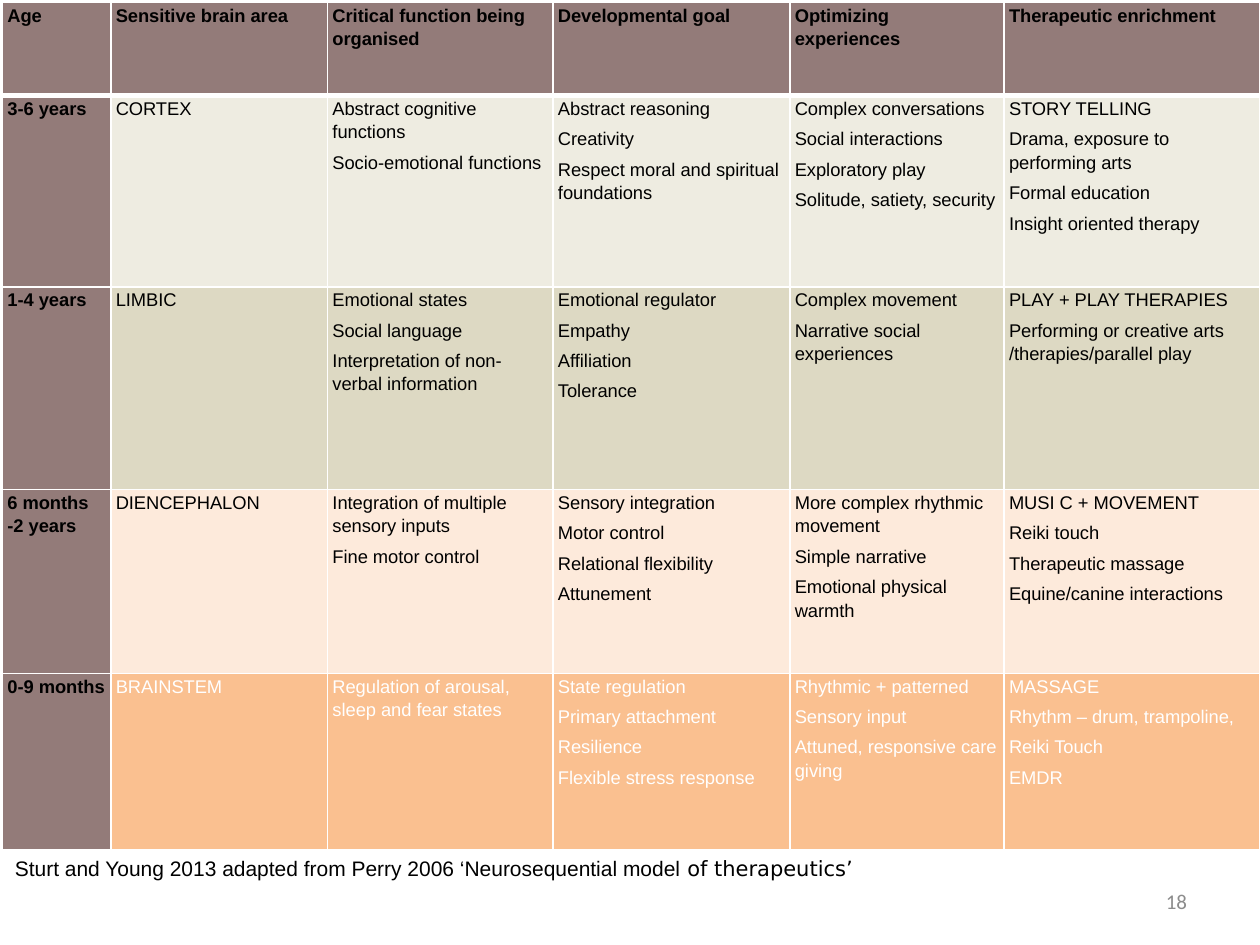
from collections import namedtuple
from dataclasses import dataclass

from lxml.etree import SubElement
from pptx import Presentation
from pptx.dml.color import RGBColor as Rgb
from pptx.enum.text import MSO_ANCHOR as Anchor, PP_ALIGN as Align
from pptx.oxml.ns import qn
from pptx.util import Cm, Pt

Box = namedtuple("Box", "left top width height")


@dataclass(frozen=True)
class Theme:
    heading_fill: str = "937B79"
    ink: str = "000000"
    light: str = "FFFFFF"
    muted: str = "8C8C8C"
    body_font: str = "Arial"
    credit_font: str = "DejaVu Sans"
    number_font: str = "Calibri"
    table_size: float = 10.5
    note_size: float = 12
    line_spacing: float = 1.15


THEME = Theme()
Stage = namedtuple("Stage", "age fill ink columns")

HEADINGS = ["Age", "Sensitive brain area", "Critical function being organised",
            "Developmental goal", "Optimizing experiences", "Therapeutic enrichment"]
STAGES = [
    Stage("3-6 years", "EEECE1", THEME.ink, [
        ["CORTEX"],
        ["Abstract cognitive functions", "Socio-emotional functions"],
        ["Abstract reasoning", "Creativity", "Respect moral and spiritual foundations"],
        ["Complex conversations", "Social interactions", "Exploratory play",
         "Solitude, satiety, security"],
        ["STORY TELLING", "Drama, exposure to performing arts", "Formal education",
         "Insight oriented therapy"],
    ]),
    Stage("1-4 years", "DDD9C3", THEME.ink, [
        ["LIMBIC"],
        ["Emotional states", "Social language", "Interpretation of non-verbal information"],
        ["Emotional regulator", "Empathy", "Affiliation", "Tolerance"],
        ["Complex movement", "Narrative social experiences"],
        ["PLAY + PLAY THERAPIES", "Performing or creative arts /therapies/parallel play"],
    ]),
    Stage("6 months -2 years", "FDEADB", THEME.ink, [
        ["DIENCEPHALON"],
        ["Integration of multiple sensory inputs", "Fine motor control"],
        ["Sensory integration", "Motor control", "Relational flexibility", "Attunement"],
        ["More complex rhythmic movement", "Simple narrative", "Emotional physical warmth"],
        ["MUSI C + MOVEMENT", "Reiki touch", "Therapeutic massage",
         "Equine/canine interactions"],
    ]),
    Stage("0-9 months", "FAC090", THEME.light, [
        ["BRAINSTEM"],
        ["Regulation of arousal, sleep and fear states"],
        ["State regulation", "Primary attachment", "Resilience", "Flexible stress response"],
        ["Rhythmic + patterned", "Sensory input", "Attuned, responsive care giving"],
        ["MASSAGE", "Rhythm – drum, trampoline,", "Reiki Touch", "EMDR"],
    ]),
]
COLUMN_SHARES = [0.86, 1.72, 1.79, 1.88, 1.70, 2.03]
ROW_SHARES = [0.74, 1.52, 1.61, 1.46, 1.40]


def add_run(paragraph, text, font, size, color, bold=False):
    run = paragraph.add_run()
    run.text = text
    run.font.name = font
    run.font.size = Pt(size)
    run.font.bold = bold
    run.font.color.rgb = Rgb.from_string(color)


def draw_borders(cell, bottom):
    properties = cell._tc.get_or_add_tcPr()
    for side, width in (("lnL", 1), ("lnR", 1), ("lnT", 1), ("lnB", bottom)):
        line = SubElement(properties, qn(f"a:{side}"), w=str(Pt(width)))
        paint = SubElement(line, qn("a:solidFill"))
        SubElement(paint, qn("a:srgbClr"), val=THEME.light)


def fill_cell(cell, lines, fill, ink, bold=False, before=2, after=2, bottom=1):
    draw_borders(cell, bottom)
    cell.fill.solid()
    cell.fill.fore_color.rgb = Rgb.from_string(fill)
    cell.margin_left = cell.margin_right = Cm(0.1)
    cell.margin_top = cell.margin_bottom = 0
    frame = cell.text_frame
    for index, line in enumerate(lines):
        paragraph = frame.add_paragraph() if index else frame.paragraphs[0]
        paragraph.line_spacing = THEME.line_spacing
        paragraph.space_before = Pt(before)
        paragraph.space_after = Pt(after)
        add_run(paragraph, line, THEME.body_font, THEME.table_size, ink, bold)


def share_out(tracks, shares, total, dimension):
    for track, share in zip(tracks, shares):
        setattr(track, dimension, int(total * share / sum(shares)))


def add_stage_table(slide, box):
    table = slide.shapes.add_table(len(STAGES) + 1, len(HEADINGS), *box).table
    table.first_row = table.horz_banding = False
    share_out(table.columns, COLUMN_SHARES, box.width, "width")
    share_out(table.rows, ROW_SHARES, box.height, "height")
    for column, heading in enumerate(HEADINGS):
        fill_cell(table.cell(0, column), [heading], THEME.heading_fill, THEME.ink,
                  bold=True, before=0, after=10, bottom=3)
    for row, stage in enumerate(STAGES, start=1):
        fill_cell(table.cell(row, 0), [stage.age], THEME.heading_fill, THEME.ink, bold=True)
        for column, lines in enumerate(stage.columns, start=1):
            fill_cell(table.cell(row, column), lines, stage.fill, stage.ink)


def add_note(slide, box, runs, color, align=Align.LEFT, anchor=Anchor.TOP):
    frame = slide.shapes.add_textbox(*box).text_frame
    frame.word_wrap = True
    frame.vertical_anchor = anchor
    paragraph = frame.paragraphs[0]
    paragraph.alignment = align
    for text, font in runs:
        add_run(paragraph, text, font, THEME.note_size, color)


def add_footer(slide, box):
    credit = Box(box.left, box.top, Cm(19.63), Cm(0.77))
    number_width = Cm(5.92)
    number = Box(box.left + box.width - Cm(1.22) - number_width, box.top + Cm(0.53),
                 number_width, Cm(1.01))
    add_note(slide, credit, [
        ("Sturt and Young 2013 adapted from Perry 2006 ‘Neurosequential model ",
         THEME.body_font),
        ("of therapeutics’", THEME.credit_font),
    ], THEME.ink)
    add_note(slide, number, [("18", THEME.number_font)], THEME.muted,
             Align.RIGHT, Anchor.MIDDLE)


def main():
    deck = Presentation()
    deck.slide_width, deck.slide_height = Cm(25.4), Cm(19.05)
    slide = deck.slides.add_slide(deck.slide_layouts[6])
    add_stage_table(slide, Box(Cm(0.05), Cm(0.05), Cm(25.35), Cm(17.08)))
    add_footer(slide, Box(Cm(0.05), Cm(17.13), Cm(25.35), Cm(1.92)))
    deck.save("out.pptx")


if __name__ == "__main__":
    main()
